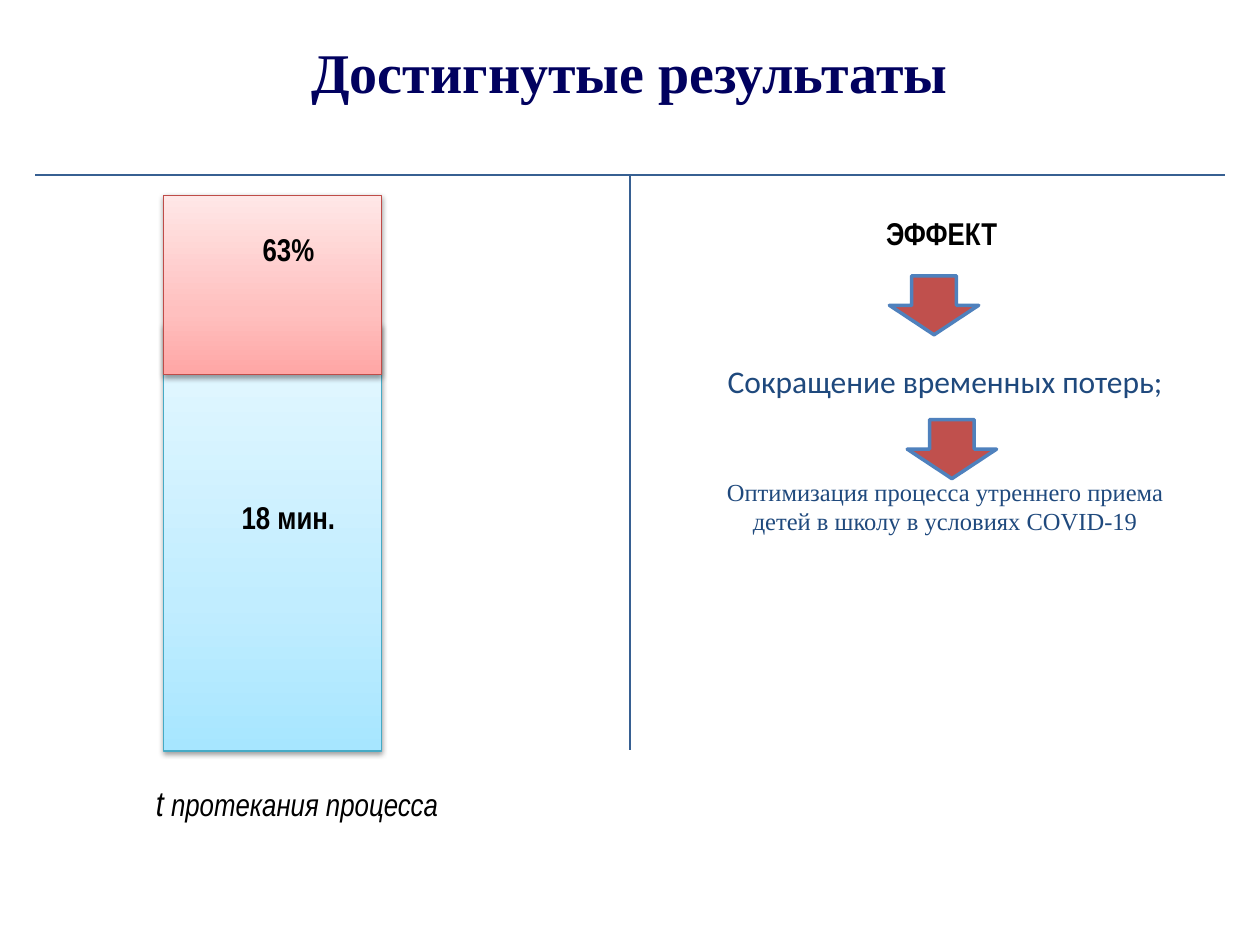
from copy import deepcopy
from dataclasses import dataclass

from lxml.etree import SubElement
from pptx import Presentation
from pptx.dml.color import RGBColor as Rgb
from pptx.enum.shapes import MSO_CONNECTOR as Connector, MSO_SHAPE as Shape
from pptx.enum.text import MSO_ANCHOR as Anchor, PP_ALIGN as Align
from pptx.oxml.ns import qn
from pptx.util import Cm, Pt


@dataclass(frozen=True)
class Theme:
    navy: str = "01015F"
    blue: str = "1F497D"
    black: str = "000000"
    rule: str = "376092"
    arrow_fill: str = "C0504D"
    arrow_line: str = "4F81BD"
    time_line: str = "46AAC5"
    time_stops: tuple = ((0, "A7E6FF"), (0.35, "C1EDFF"), (1, "E7F8FF"))
    saving_line: str = "BF4C48"
    saving_stops: tuple = ((0, "FFA6A5"), (0.35, "FFC0BF"), (1, "FFE7E7"))
    serif: str = "Times New Roman"
    sans: str = "Calibri"
    narrow: str = "Arial Narrow"
    title_size: int = 32
    symbol_size: int = 20
    text_size: int = 18
    small_size: int = 14


THEME = Theme()


def style_run(run, face, size, color, bold=False, italic=False):
    run.font.name = face
    run.font.size = Pt(size)
    run.font.color.rgb = Rgb.from_string(color)
    run.font.bold = bold
    run.font.italic = italic


def style_line(item, color, width):
    item.line.color.rgb = Rgb.from_string(color)
    item.line.width = Pt(width)


def box(left, top, width, height):
    return Cm(left), Cm(top), Cm(width), Cm(height)


def add_title(slide, wording):
    title = slide.shapes.title
    title.left, title.top, title.width, title.height = box(0.3, 0.53, 24.79, 1.8)
    title.text_frame.text = wording
    title.text_frame.vertical_anchor = Anchor.MIDDLE
    heading = title.text_frame.paragraphs[0]
    heading.alignment = Align.CENTER
    style_run(heading.runs[0], THEME.serif, THEME.title_size, THEME.navy, bold=True)


def add_text(slide, place, wordings):
    frame = slide.shapes.add_textbox(*box(*place)).text_frame
    frame.word_wrap = True
    frame.text = "\n".join(wordings)
    for paragraph in frame.paragraphs:
        paragraph.alignment = Align.CENTER
    return frame.paragraphs


def add_label(slide, top, wording):
    label = add_text(slide, (3.91, top, 3.81, 1.02), [wording])[0]
    style_run(label.runs[0], THEME.narrow, THEME.text_size, THEME.black, bold=True)


def add_caption(slide):
    caption = add_text(slide, (2.69, 15.62, 6.6, 1.12), ["t"])[0]
    caption.add_run().text = " протекания процесса"
    for run, size in zip(caption.runs, (THEME.symbol_size, THEME.text_size)):
        style_run(run, THEME.narrow, size, THEME.black, italic=True)


def add_effects(slide):
    heading, saving, improvement = add_text(slide, (14.05, 4.19, 10.01, 9.07), [
        "ЭФФЕКТ ",
        "Сокращение временных потерь;",
        "Оптимизация процесса утреннего приема детей в школу в условиях COVID-19",
    ])
    style_run(heading.runs[0], THEME.narrow, THEME.text_size, THEME.black, bold=True)
    style_run(saving.runs[0], THEME.sans, THEME.text_size, THEME.blue)
    style_run(improvement.runs[0], THEME.serif, THEME.small_size, THEME.blue)
    saving.space_before = Pt(63)
    improvement.space_before = Pt(44)


def add_rule(slide, start, end):
    rule = slide.shapes.add_connector(
        Connector.STRAIGHT, *(Cm(length) for length in start + end))
    style_line(rule, THEME.rule, 1.5)
    SubElement(rule._element.spPr, qn("a:effectLst"))


def add_arrow(slide, left, top):
    arrow = slide.shapes.add_shape(Shape.DOWN_ARROW, *box(left, top, 1.8, 1.19))
    arrow.shadow.inherit = False
    arrow.fill.solid()
    arrow.fill.fore_color.rgb = Rgb.from_string(THEME.arrow_fill)
    style_line(arrow, THEME.arrow_line, 2)


def add_shadow(shape):
    shape.shadow.inherit = False
    effects = shape._element.spPr.find(qn("a:effectLst"))
    shadow = SubElement(effects, qn("a:outerShdw"), blurRad="40000",
                        dist="20000", dir="5400000", rotWithShape="0")
    color = SubElement(shadow, qn("a:srgbClr"), val=THEME.black)
    SubElement(color, qn("a:alpha"), val="38000")


def add_bar(slide, top, height, stops, line_color):
    bar = slide.shapes.add_shape(Shape.RECTANGLE, *box(3.3, top, 4.39, height))
    bar.fill.gradient()
    bar.fill.gradient_angle = 90
    stop_list = bar._element.spPr.find(".//" + qn("a:gsLst"))
    stop_list.insert(1, deepcopy(stop_list[0]))
    for stop, (position, color) in zip(bar.fill.gradient_stops, stops):
        stop.position = position
        stop.color.rgb = Rgb.from_string(color)
    style_line(bar, line_color, 0.75)
    add_shadow(bar)


def main():
    """Build the slide comparing process time with the achieved effect."""
    deck = Presentation()
    deck.slide_width, deck.slide_height = Cm(25.4), Cm(19.05)
    slide = deck.slides.add_slide(deck.slide_layouts[5])
    add_title(slide, "Достигнутые результаты")
    add_bar(slide, 6.53, 8.61, THEME.time_stops, THEME.time_line)
    add_effects(slide)
    add_rule(slide, (0.71, 3.53), (24.69, 3.53))
    add_rule(slide, (12.7, 3.53), (12.7, 15.11))
    add_arrow(slide, 17.93, 5.56)
    add_arrow(slide, 18.29, 8.46)
    add_bar(slide, 3.94, 3.61, THEME.saving_stops, THEME.saving_line)
    add_label(slide, 4.52, "63%")
    add_label(slide, 9.91, "18 мин.")
    add_caption(slide)
    deck.save("out.pptx")


if __name__ == "__main__":
    main()
